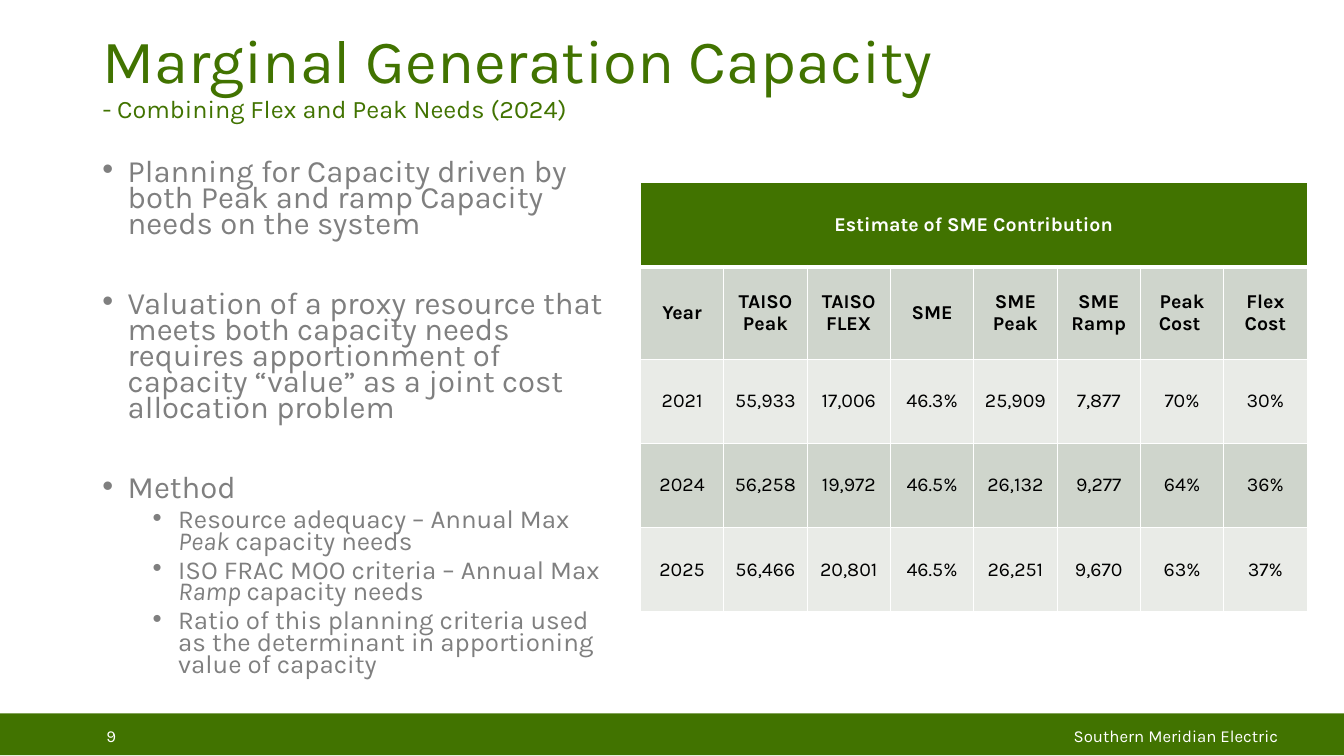
from lxml import etree
from pptx import Presentation
from pptx.dml.color import RGBColor
from pptx.enum.shapes import MSO_SHAPE
from pptx.enum.text import MSO_ANCHOR, MSO_AUTO_SIZE, PP_ALIGN
from pptx.oxml.ns import qn
from pptx.util import Cm, Pt

LEFT, CENTER = PP_ALIGN.LEFT, PP_ALIGN.CENTER
TOP, MIDDLE = MSO_ANCHOR.TOP, MSO_ANCHOR.MIDDLE
NO_AUTOFIT = MSO_AUTO_SIZE.NONE
RECTANGLE = MSO_SHAPE.RECTANGLE

FONT = "Karla"
GREEN = RGBColor(0x41, 0x73, 0x00)
GRAY = RGBColor(0x7F, 0x7F, 0x7F)
WHITE = RGBColor(0xFF, 0xFF, 0xFF)
BLACK = RGBColor(0x00, 0x00, 0x00)
BAND_DARK = RGBColor(0xCF, 0xD5, 0xCC)
BAND_LIGHT = RGBColor(0xE9, 0xEB, 0xE7)

# Each bullet: level, space before in points, runs as (text, italic)
BULLETS = [
    (0, 10, [("Planning for Capacity driven by both Peak and ramp Capacity "
              "needs on the system", False)]),
    (0, 38.5, [("Valuation of a proxy resource that meets both capacity needs "
                "requires apportionment of capacity “value” as a joint cost "
                "allocation problem", False)]),
    (0, 38.5, [("Method", False)]),
    (1, 5, [("Resource adequacy – Annual Max ", False), ("Peak", True),
            (" capacity needs", False)]),
    (1, 5, [("ISO FRAC MOO criteria – Annual Max ", False), ("Ramp ", True),
            ("capacity needs", False)]),
    (1, 5, [("Ratio of this planning criteria used as the determinant in "
             "apportioning value of capacity", False)]),
]
LEVEL_SIZES = [22.2, 18.5]
LEVEL_INDENTS = [Cm(0.64), Cm(1.91)]
HANGING = Cm(0.64)

TABLE_TITLE = "Estimate of SME Contribution"
TABLE_ROWS = [
    ["Year", "TAISO Peak", "TAISO FLEX", "SME", "SME Peak", "SME Ramp",
     "Peak Cost ", "Flex Cost"],
    ["2021", "55,933", "17,006", "46.3%", "25,909", "7,877", "70%", "30%"],
    ["2024", "56,258", "19,972", "46.5%", "26,132", "9,277", "64%", "36%"],
    ["2025", "56,466", "20,801", "46.5%", "26,251", "9,670", "63%", "37%"],
]
COLUMN_WIDTH, ROW_HEIGHT, LABEL_HEIGHT = Cm(2.1), Cm(2.12), Cm(2.33)


def add_run(p, text, size, color, bold=False, italic=False):
    r = p.add_run()
    r.text = text
    font = r.font
    font.name, font.size = FONT, Pt(size)
    font.bold, font.italic = bold, italic
    font.color.rgb = color


def add_text_frame(s, left, top, width, height, anchor):
    tf = s.shapes.add_textbox(left, top, width, height).text_frame
    tf.word_wrap = True
    tf.auto_size = NO_AUTOFIT
    tf.vertical_anchor = anchor
    return tf


def set_title(s):
    sp = s.shapes.title
    sp.left, sp.top, sp.width, sp.height = Cm(2.33), Cm(0.46), Cm(29.21), Cm(2.95)
    tf = sp.text_frame
    tf.auto_size = NO_AUTOFIT
    tf.vertical_anchor = MIDDLE
    p = tf.paragraphs[0]
    p.alignment = LEFT
    p.line_spacing = 0.9
    add_run(p, "Marginal Generation Capacity", 44, GREEN)
    p.add_line_break()
    add_run(p, "- Combining Flex and Peak Needs (2024)", 18, GREEN)


def set_bullet(p, level):
    pPr = p._p.get_or_add_pPr()
    pPr.set("marL", str(LEVEL_INDENTS[level]))
    pPr.set("indent", str(-HANGING))
    etree.SubElement(pPr, qn("a:buFont")).set("typeface", "Arial")
    etree.SubElement(pPr, qn("a:buChar")).set("char", "•")


def add_bullets(s):
    tf = add_text_frame(s, Cm(2.33), Cm(3.94), Cm(13.59), Cm(13.82), TOP)
    for i, (level, space_before, runs) in enumerate(BULLETS):
        p = tf.add_paragraph() if i else tf.paragraphs[0]
        p.level = level
        p.line_spacing = 0.7
        p.space_before = Pt(space_before)
        set_bullet(p, level)
        for text, italic in runs:
            add_run(p, text, LEVEL_SIZES[level], GRAY, italic=italic)


def set_borders(cell, top, bottom):
    """White lines: 1 pt at the sides, the given points above and below."""
    tcPr = cell._tc.get_or_add_tcPr()
    edges = [("a:lnL", 1), ("a:lnR", 1), ("a:lnT", top), ("a:lnB", bottom)]
    for i, (tag, points) in enumerate(edges):
        ln = etree.Element(qn(tag), w=str(Pt(points)))
        fill = etree.SubElement(ln, qn("a:solidFill"))
        etree.SubElement(fill, qn("a:srgbClr")).set("val", str(WHITE))
        tcPr.insert(i, ln)


def fill_cell(cell, text, fill, color, bold, top=1, bottom=1):
    cell.fill.solid()
    cell.fill.fore_color.rgb = fill
    cell.vertical_anchor = MIDDLE
    p = cell.text_frame.paragraphs[0]
    p.alignment = CENTER
    if text:
        add_run(p, text, 14, color, bold)
    set_borders(cell, top, bottom)


def add_capacity_table(s):
    rows, cols = len(TABLE_ROWS) + 1, len(TABLE_ROWS[0])
    height = ROW_HEIGHT * (rows - 1) + LABEL_HEIGHT
    table = s.shapes.add_table(rows, cols, Cm(16.14), Cm(4.6),
                               COLUMN_WIDTH * cols, height).table
    for column in table.columns:
        column.width = COLUMN_WIDTH
    for i, row in enumerate(table.rows):
        row.height = LABEL_HEIGHT if i == 1 else ROW_HEIGHT
    table.cell(0, 0).merge(table.cell(0, cols - 1))
    for j in range(cols):
        fill_cell(table.cell(0, j), "" if j else TABLE_TITLE, GREEN, WHITE,
                  True, bottom=3)
    for i, values in enumerate(TABLE_ROWS, start=1):
        is_label = i == 1
        for j, value in enumerate(values):
            fill_cell(table.cell(i, j), value,
                      BAND_DARK if i % 2 else BAND_LIGHT, BLACK, is_label,
                      top=3 if is_label else 1)


def add_footer_bar(s, width):
    sp = s.shapes.add_shape(RECTANGLE, 0, Cm(17.98), width, Cm(1.05))
    sp.shadow.inherit = False
    sp.fill.solid()
    sp.fill.fore_color.rgb = GREEN
    sp.line.fill.background()


def add_footer_text(s, text, left, width):
    tf = add_text_frame(s, left, Cm(18.02), width, Cm(1.02), MIDDLE)
    p = tf.paragraphs[0]
    p.alignment = CENTER
    add_run(p, text, 12, WHITE)


def main():
    prs = Presentation()
    prs.slide_width, prs.slide_height = Cm(33.87), Cm(19.05)
    s = prs.slides.add_slide(prs.slide_layouts[5])
    add_footer_bar(s, prs.slide_width)
    set_title(s)
    add_bullets(s)
    add_capacity_table(s)
    add_footer_text(s, "Southern Meridian Electric", Cm(25.4), Cm(8.47))
    add_footer_text(s, "9", Cm(0), Cm(5.61))
    prs.save("out.pptx")


if __name__ == "__main__":
    main()
